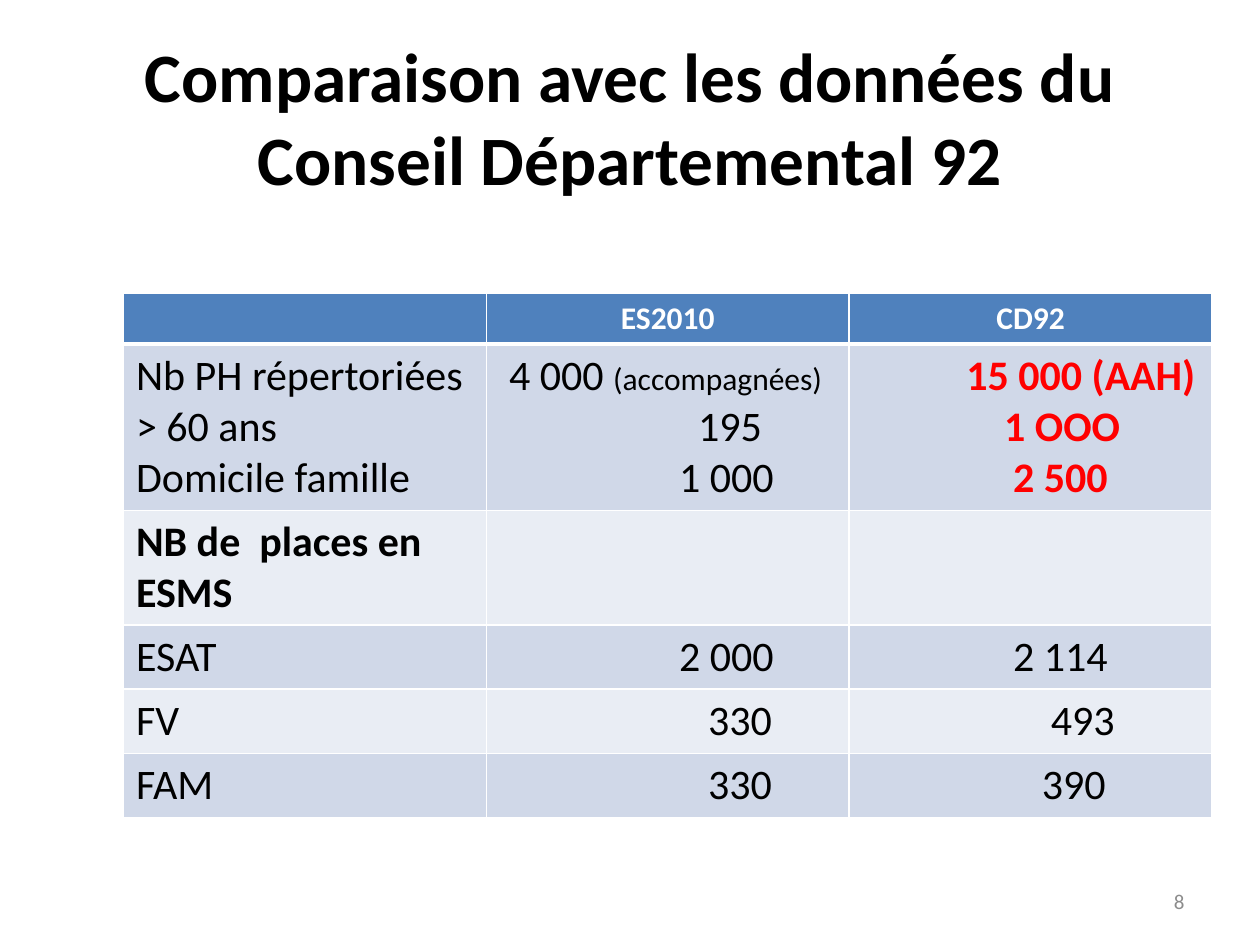
"""Build the slide comparing ES2010 figures with those of the CD92."""
import pptx
import pptx.dml.color
import pptx.enum.text
import pptx.oxml
import pptx.oxml.ns
import pptx.util

Inches = pptx.util.Inches
Pt = pptx.util.Pt
ALIGN = pptx.enum.text.PP_ALIGN
MIDDLE = pptx.enum.text.MSO_ANCHOR.MIDDLE

FONT = "Calibri"
BLACK, WHITE, RED, GREY = "000000", "FFFFFF", "FF0000", "8C8C8C"
HEADER_FILL, BAND_FILLS = "4F81BD", ("D0D8E8", "E9EDF4")

TITLE = "Comparaison avec les données du Conseil Départemental 92"
PAGE_NUMBER = "8"
HEADERS = ("", "ES2010", "CD92")

PLAIN = {"size": 24}
SMALL = {"size": 18}
BOLD = {"size": 24, "bold": True}
ALERT = {"size": 24, "bold": True, "color": RED}

# Each cell lists its lines as (indent in inches, runs).
ROWS = [
    (
        [(0, [("Nb PH répertoriées", PLAIN)]),
         (0, [("> 60 ans", PLAIN)]),
         (0, [("Domicile famille", PLAIN)])],
        [(0.08, [("4 000 ", PLAIN), ("(accompagnées)", SMALL)]),
         (1.58, [("195", PLAIN)]),
         (1.43, [("1 000", PLAIN)])],
        [(0.83, [("15 000 (AAH)", ALERT)]),
         (1.13, [("1 OOO", ALERT)]),
         (1.2, [("2 500", ALERT)])],
    ),
    ([(0, [("NB de  places en ESMS", BOLD)])], [], []),
    ([(0, [("ESAT", PLAIN)])], [(1.43, [("2 000", PLAIN)])], [(1.2, [("2 114", PLAIN)])]),
    ([(0, [("FV", PLAIN)])], [(1.66, [("330", PLAIN)])], [(1.5, [("493", PLAIN)])]),
    ([(0, [("FAM", PLAIN)])], [(1.66, [("330", PLAIN)])], [(1.43, [("390", PLAIN)])]),
]
COLUMN_WIDTH = 2.88
ROW_HEIGHTS = (0.4, 1.32, 0.91, 0.51, 0.51, 0.51)


def rgb(value):
    return pptx.dml.color.RGBColor.from_string(value)


def add_span(para, text, size, bold=False, color=BLACK):
    span = para.add_run()
    span.text = text
    span.font.name = FONT
    span.font.size = Pt(size)
    span.font.bold = bold
    span.font.color.rgb = rgb(color)


def add_text(page, place, text, align, **style):
    box = page.shapes.add_textbox(*map(Inches, place))
    frame = box.text_frame
    frame.word_wrap = True
    frame.vertical_anchor = MIDDLE
    para = frame.paragraphs[0]
    para.alignment = align
    add_span(para, text, **style)


def set_borders(cell, bottom):
    properties = cell._tc.get_or_add_tcPr()
    for side, width in (("L", 1), ("R", 1), ("T", 1), ("B", bottom)):
        properties.append(pptx.oxml.parse_xml(
            f'<a:ln{side} {pptx.oxml.ns.nsdecls("a")} w="{Pt(width)}">'
            f'<a:solidFill><a:srgbClr val="{WHITE}"/></a:solidFill></a:ln{side}>'))


def fill_cell(cell, lines, color, align=ALIGN.LEFT, bottom=1):
    set_borders(cell, bottom)
    cell.fill.solid()
    cell.fill.fore_color.rgb = rgb(color)
    frame = cell.text_frame
    for index, (indent, spans) in enumerate(lines):
        para = frame.add_paragraph() if index else frame.paragraphs[0]
        para.alignment = align
        if indent:
            para._p.get_or_add_pPr().set("marL", str(Inches(indent)))
        for text, style in spans:
            add_span(para, text, **style)


def add_comparison(page):
    frame = page.shapes.add_table(
        len(ROW_HEIGHTS), len(HEADERS), Inches(0.98), Inches(2.33),
        Inches(COLUMN_WIDTH * len(HEADERS)), Inches(sum(ROW_HEIGHTS)))
    table = frame.table
    for column in table.columns:
        column.width = Inches(COLUMN_WIDTH)
    for row, height in zip(table.rows, ROW_HEIGHTS):
        row.height = Inches(height)
    for column, label in enumerate(HEADERS):
        style = {"size": 18, "bold": True, "color": WHITE}
        lines = [(0, [(label, style)])] if label else []
        fill_cell(table.cell(0, column), lines, HEADER_FILL, ALIGN.CENTER, bottom=3)
    for index, cells in enumerate(ROWS):
        for column, lines in enumerate(cells):
            fill_cell(table.cell(index + 1, column), lines, BAND_FILLS[index % 2])


def main():
    deck = pptx.Presentation()
    deck.slide_width, deck.slide_height = Inches(10), Inches(7.5)
    page = deck.slides.add_slide(deck.slide_layouts[6])
    add_text(page, (0.5, 0.3, 9, 1.24), TITLE, ALIGN.CENTER, size=39.6, bold=True)
    add_comparison(page)
    add_text(page, (7.17, 6.95, 2.33, 0.4), PAGE_NUMBER, ALIGN.RIGHT, size=12, color=GREY)
    deck.save("out.pptx")


if __name__ == "__main__":
    main()
